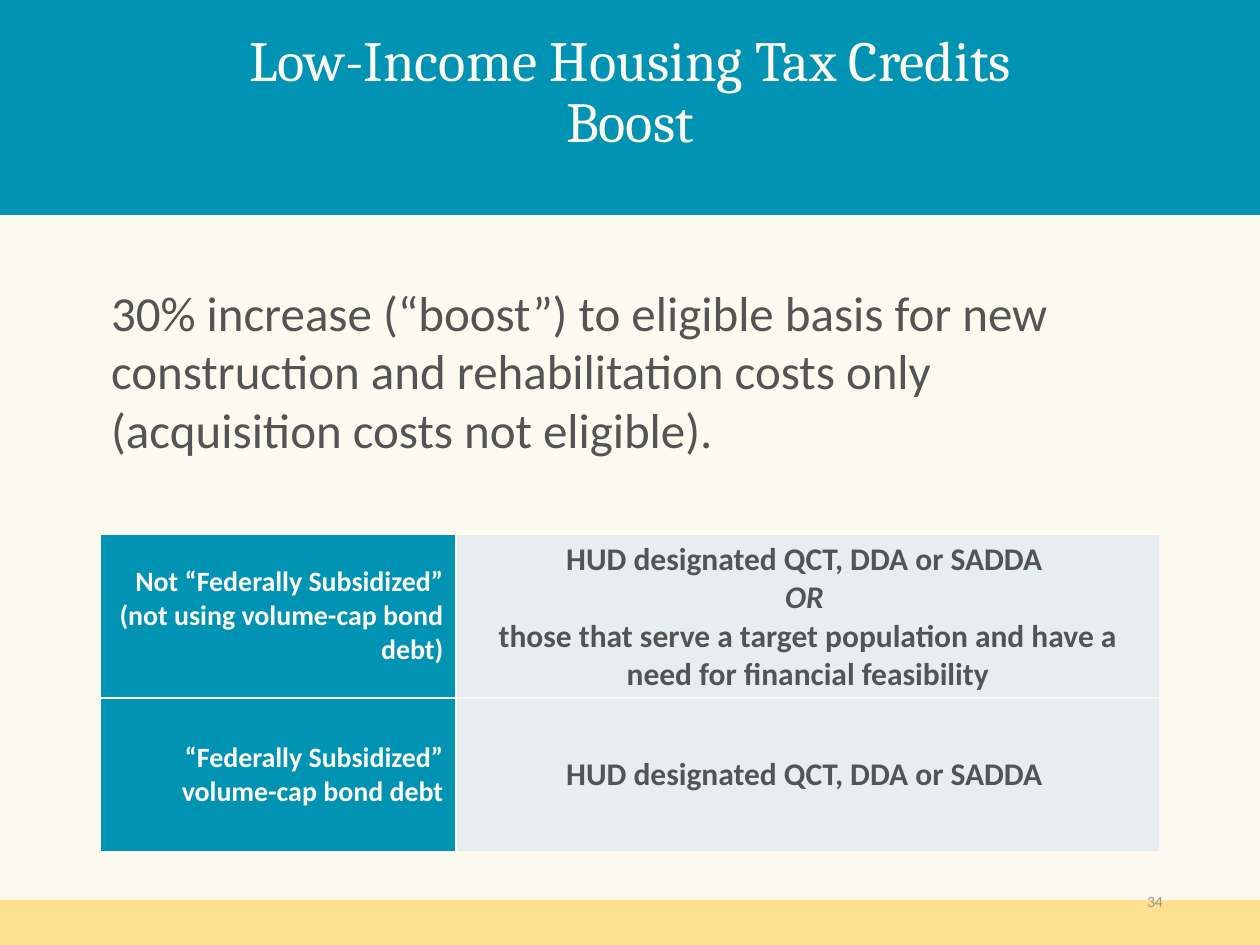
from lxml import etree
from pptx import Presentation
from pptx import util as u
from pptx.dml.color import RGBColor
from pptx.enum import shapes, text
from pptx.oxml import ns

SCALE = u.Inches(1) / 126
CREAM, TEAL, YELLOW = "FCF9EF", "0193B4", "FDE18F"
CELL_TEAL, PALE, DARK, GREY = "0193B3", "E7EEF2", "535554", "999999"
LEFT, CENTER, RIGHT = text.PP_ALIGN.LEFT, text.PP_ALIGN.CENTER, text.PP_ALIGN.RIGHT
TOP, MIDDLE, BOTTOM = text.MSO_ANCHOR.TOP, text.MSO_ANCHOR.MIDDLE, text.MSO_ANCHOR.BOTTOM

ROWS = [
    (["Not “Federally Subsidized” (not using volume-cap bond debt)"],
     ["HUD designated QCT, DDA or SADDA ", "OR ",
      "those that serve a target population and have a need for financial feasibility"]),
    (["“Federally Subsidized” volume-cap bond debt"],
     ["HUD designated QCT, DDA or SADDA "]),
]


def px(length):
    """Turn pixels into EMU."""
    return u.Emu(round(length * SCALE))


def paint(color_format, color):
    """Set a colour format, such as a font's or a fill's, to a hex colour."""
    color_format.rgb = RGBColor.from_string(color)


def fill(thing, color):
    """Give a shape, cell or background a solid fill."""
    thing.fill.solid()
    paint(thing.fill.fore_color, color)


def write(frame, lines, size, color, font="Calibri", align=LEFT, bold=False,
          spacing=None, italic_lines=()):
    """Write one paragraph for each line into a text frame."""
    frame.word_wrap = True
    for index, line in enumerate(lines):
        para = frame.paragraphs[0] if index == 0 else frame.add_paragraph()
        para.text = line
        para.alignment = align
        para.line_spacing = spacing
        for span in para.runs:
            span.font.name, span.font.size = font, u.Pt(size)
            span.font.bold, span.font.italic = bold, line in italic_lines
            paint(span.font.color, color)


def add_band(page, left, top, width, height, color):
    """Draw a plain coloured band."""
    band = page.shapes.add_shape(
        shapes.MSO_SHAPE.RECTANGLE, px(left), px(top), px(width), px(height))
    band.shadow.inherit = False
    band.line.fill.background()
    fill(band, color)


def add_text(page, left, top, width, height, line, anchor=TOP, inset=(13, 6), **style):
    """Place a text box with one styled paragraph."""
    box = page.shapes.add_textbox(px(left), px(top), px(width), px(height))
    frame = box.text_frame
    frame.vertical_anchor = anchor
    frame.margin_left = frame.margin_right = px(inset[0])
    frame.margin_top = frame.margin_bottom = px(inset[1])
    write(frame, [line], **style)


def add_borders(cell, color):
    """Draw a one-point line on every side of a cell."""
    properties = cell._tc.get_or_add_tcPr()
    for index, side in enumerate(("a:lnL", "a:lnR", "a:lnT", "a:lnB")):
        line = etree.Element(ns.qn(side), w=str(u.Pt(1)))
        solid = etree.SubElement(line, ns.qn("a:solidFill"))
        etree.SubElement(solid, ns.qn("a:srgbClr"), val=color)
        properties.insert(index, line)


def add_header(page, left, top, width, height):
    """Draw the header band with its title."""
    add_band(page, left, top, width, height, TEAL)
    add_text(page, left + 158, top + 54, width - 316, 106,
             "Low-Income Housing Tax Credits\vBoost", anchor=BOTTOM, inset=(10, 5),
             size=32.4, color=CREAM, font="Cambria", align=CENTER, spacing=0.9)


def add_footer(page, left, top, width, height):
    """Draw the footer band with the slide number."""
    add_band(page, left, top, width, height, YELLOW)
    add_text(page, left + width - 370, top - 24, 283, 50, "34", anchor=MIDDLE,
             inset=(10, 5), size=9, color=GREY, align=RIGHT)


def add_boost_table(page, left, top, width, height):
    """Place the table of subsidy types and eligible areas."""
    table = page.shapes.add_table(
        len(ROWS), 2, px(left), px(top), px(width), px(height)).table
    table.first_row = table.horz_banding = False
    label_width = 356
    table.columns[0].width = px(label_width)
    table.columns[1].width = px(width - label_width)
    styles = [
        (CELL_TEAL, dict(size=16, color=CREAM, align=RIGHT)),
        (PALE, dict(size=18, color=DARK, align=CENTER, italic_lines=("OR ",))),
    ]
    for row, contents in enumerate(ROWS):
        for column, (lines, (color, style)) in enumerate(zip(contents, styles)):
            cell = table.cell(row, column)
            cell.vertical_anchor = MIDDLE
            fill(cell, color)
            add_borders(cell, CREAM)
            write(cell.text_frame, lines, bold=True, **style)


def main():
    """Build the slide and save it."""
    deck = Presentation()
    deck.slide_width, deck.slide_height = px(1260), px(945)
    page = deck.slides.add_slide(deck.slide_layouts[6])
    fill(page.background, CREAM)
    add_footer(page, 0, 900, 1260, 45)
    add_header(page, 0, 0, 1260, 215)
    add_boost_table(page, 100, 534, 1060, 308)
    add_text(page, 98, 276, 1075, 220,
             "30% increase (“boost”) to eligible basis for new construction and "
             "rehabilitation costs only (acquisition costs not eligible).",
             size=28, color=DARK)
    deck.save("out.pptx")


if __name__ == "__main__":
    main()
